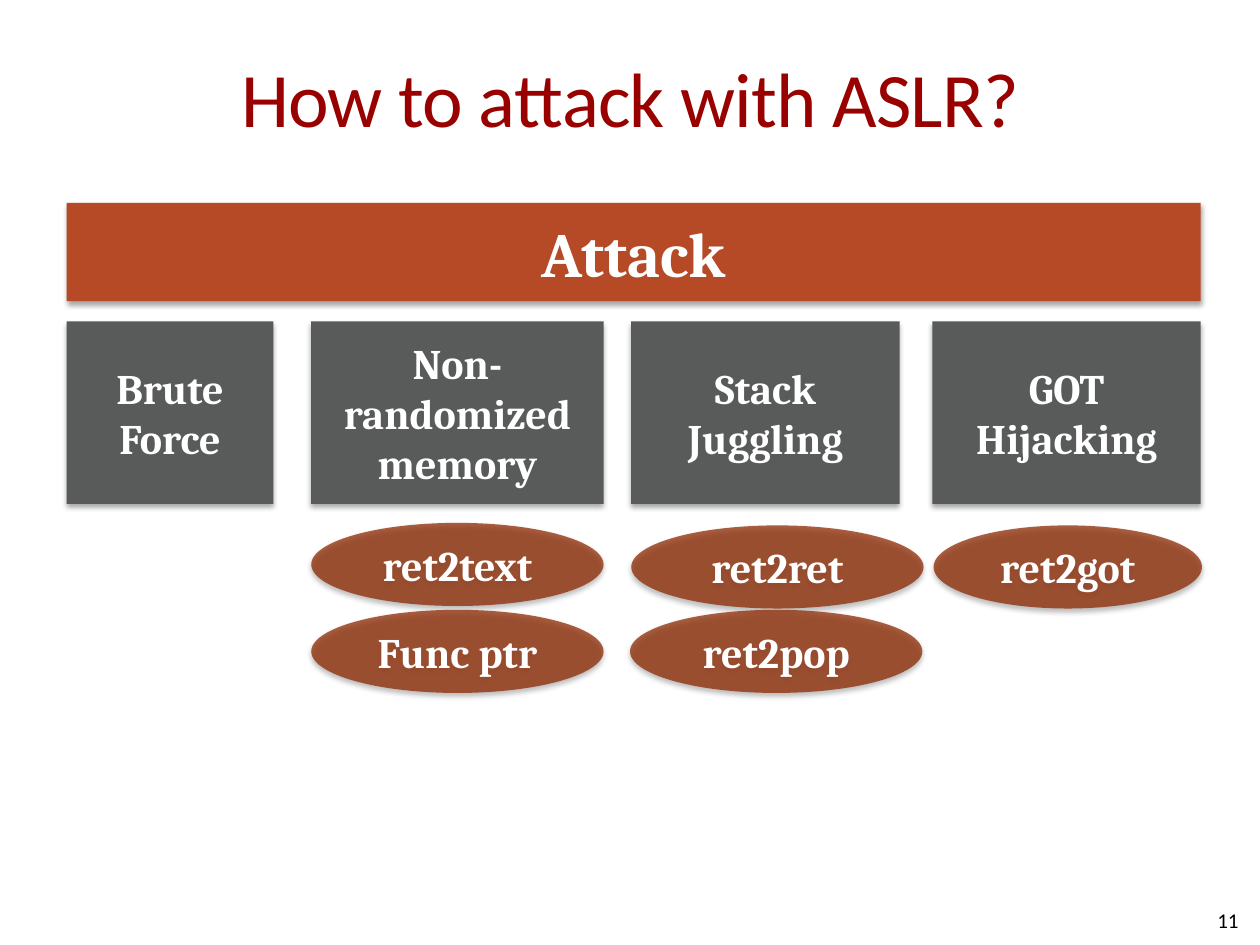
from lxml.etree import SubElement
from pptx import Presentation
from pptx.dml.color import RGBColor
from pptx.enum.shapes import MSO_SHAPE
from pptx.enum.text import MSO_ANCHOR, PP_ALIGN
from pptx.oxml.ns import qn
from pptx.util import Inches, Pt

COLORS = {
    "title": "990000",
    "attack": "B64926",
    "category": "595A5A",
    "technique": "8E2800",
    "white": "FFFFFF",
    "black": "000000",
}


def style_text(frame, text, size, font, color, align):
    frame.word_wrap = True
    frame.vertical_anchor = MSO_ANCHOR.MIDDLE
    frame.text = text
    for paragraph in frame.paragraphs:
        paragraph.alignment = align
        paragraph.font.size = Pt(size)
        paragraph.font.name = font
        paragraph.font.color.rgb = RGBColor.from_string(COLORS[color])


def add_block(kind, left, top, width, height, text, fill, size=24, opacity=None):
    block = slide.shapes.add_shape(
        kind, Inches(left), Inches(top), Inches(width), Inches(height))
    block.fill.solid()
    block.fill.fore_color.rgb = RGBColor.from_string(COLORS[fill])
    block.line.fill.background()
    properties = block._element.spPr
    if opacity:
        fill_color = properties.find(qn("a:solidFill")).find(qn("a:srgbClr"))
        SubElement(fill_color, qn("a:alpha"), val=str(opacity * 1000))

    # Soft shadow straight below the block
    block.shadow.inherit = False
    shadow = SubElement(
        properties.find(qn("a:effectLst")), qn("a:outerShdw"),
        blurRad=str(Pt(3.1)), dist=str(Pt(1.8)), dir="5400000", rotWithShape="0")
    shadow_color = SubElement(shadow, qn("a:srgbClr"), val=COLORS["black"])
    SubElement(shadow_color, qn("a:alpha"), val="35000")

    style_text(block.text_frame, text, size, "Cambria", "white", PP_ALIGN.CENTER)
    for paragraph in block.text_frame.paragraphs:
        paragraph.font.bold = True


prs = Presentation()
prs.slide_width, prs.slide_height = Inches(10), Inches(7.5)
slide = prs.slides.add_slide(prs.slide_layouts[5])

# Title
title = slide.shapes.title
title.left, title.top = Inches(0.5), Inches(0.29)
title.width, title.height = Inches(9), Inches(0.96)
heading = title.text_frame
style_text(heading, "How to attack with ASLR?", 44, "Calibri", "title", PP_ALIGN.CENTER)
heading.margin_left = heading.margin_right = 0
heading.paragraphs[0].runs[0].font._element.set("spc", "-50")

# Attack banner
add_block(MSO_SHAPE.RECTANGLE, 0.53, 1.61, 9, 0.78, "Attack", "attack", size=36)

# Attack categories: left, width, label
categories = [
    (0.53, 1.64, "Brute Force"),
    (2.47, 2.32, "Non-randomized memory"),
    (5.01, 2.13, "Stack Juggling"),
    (7.4, 2.13, "GOT\nHijacking"),
]
for left, width, label in categories:
    add_block(MSO_SHAPE.RECTANGLE, left, 2.55, width, 1.45, label, "category")

# Techniques under each category: left, top, width, label
techniques = [
    (2.47, 4.15, 2.32, "ret2text"),
    (2.47, 4.84, 2.32, "Func ptr"),
    (5.01, 4.17, 2.32, "ret2ret"),
    (5, 4.84, 2.32, "ret2pop"),
    (7.41, 4.17, 2.13, "ret2got"),
]
for left, top, width, label in techniques:
    add_block(MSO_SHAPE.OVAL, left, top, width, 0.66, label, "technique", opacity=74)

# Page number
page_number = slide.shapes.add_textbox(
    Inches(7.5), Inches(7.1), Inches(2.33), Inches(0.4)).text_frame
style_text(page_number, "11", 12, "Calibri", "black", PP_ALIGN.RIGHT)
page_number.margin_left = page_number.margin_right = 0
page_number.margin_top = page_number.margin_bottom = 0

prs.save("out.pptx")
